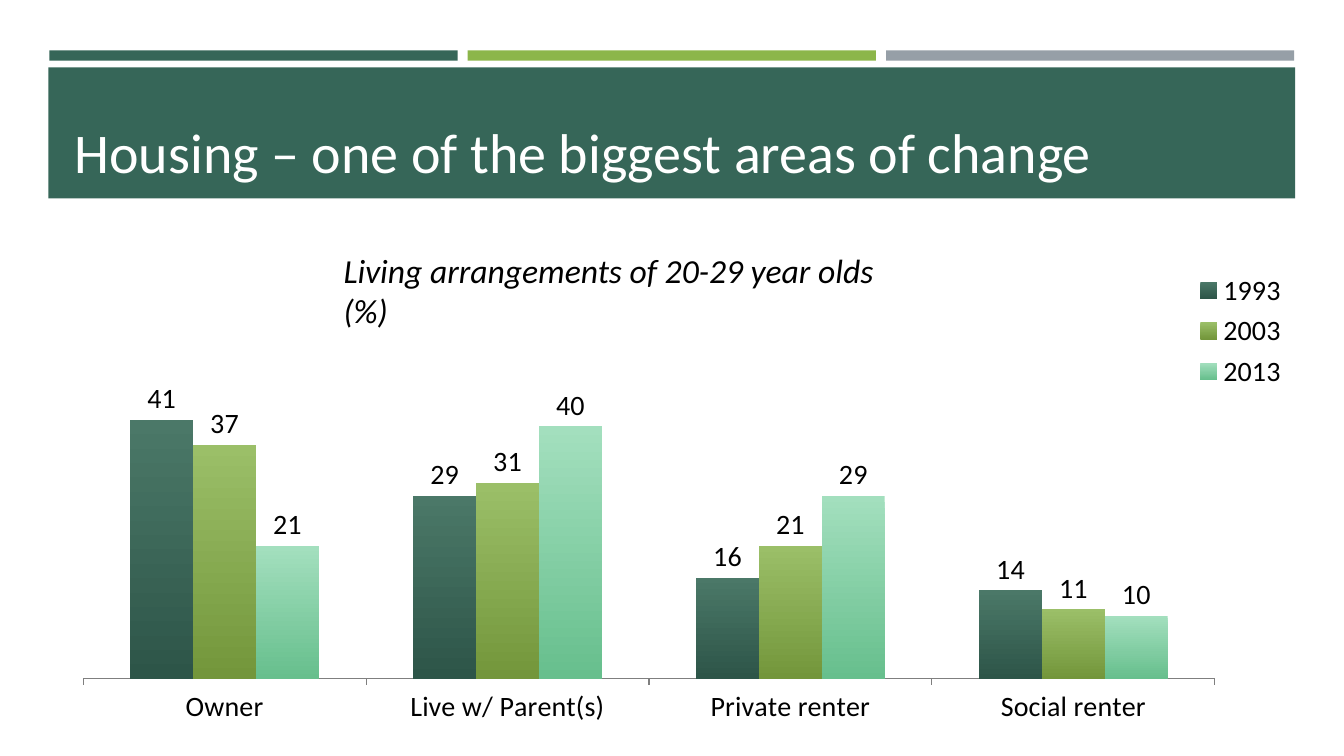
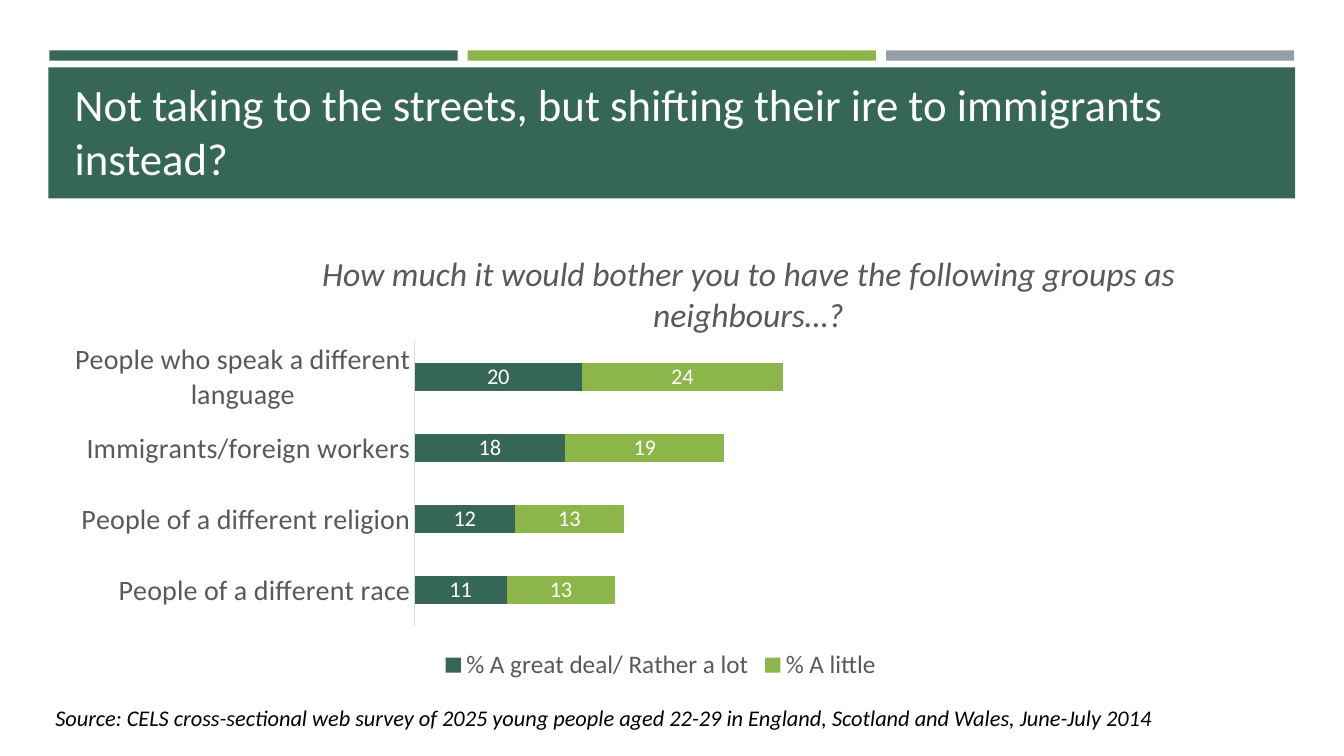
from lxml import etree
from pptx import Presentation
from pptx.chart.data import CategoryChartData
from pptx.dml.color import RGBColor
from pptx.enum import chart as charts, shapes, text
from pptx.oxml.ns import qn
from pptx.util import Pt

FONT = "Calibri"
GREEN, LIME, GREY = "366658", "8CB64A", "969FA7"
WHITE, BLACK, DARK_GREY = "FFFFFF", "000000", "595959"

STRIPE_COLOURS = [GREEN, LIME, GREY]
STRIPE_LEFT, STRIPE_TOP, STRIPE_WIDTH, STRIPE_HEIGHT, STRIPE_GAP = 35.3, 36, 291.6, 7.4, 7.2
BAND_BOX = (34.6, 48.2, 890.6, 93.6)
TITLE_BOX = (46.1, 55.4, 868.3, 79.9)

HOUSING = {
    "title": "Housing – one of the biggest areas of change",
    "title_size": 40,
    "note": "Living arrangements of 20-29 year olds (%)",
    "note_size": 24,
    "note_box": (238.3, 175, 412.6, 66),
    "chart": {
        "type": charts.XL_CHART_TYPE.COLUMN_CLUSTERED,
        "box": (41, 162, 918.7, 362.9),
        "categories": ["Owner", "Live w/ Parent(s)", "Private renter", "Social renter"],
        "series": [
            ("1993", (41, 29, 16, 14), ("4B7868", "2D5548")),
            ("2003", (37, 31, 21, 11), ("9BBF68", "73963B")),
            ("2013", (21, 40, 29, 10), ("A3DFBE", "67BF8D")),
        ],
        "maximum": 70,
        "number_format": "0",
        "label_size": 20,
        "label_colour": BLACK,
        "text_colour": BLACK,
        "axis_colour": "7F7F7F",
        "tick": charts.XL_TICK_MARK.OUTSIDE,
        "legend_position": charts.XL_LEGEND_POSITION.RIGHT,
        "legend_size": 20,
        "legend_area": (0.88, 0.08, 0.08, 0.25),
        "plot_area": (0.02, 0.02, 0.88, 0.87),
    },
}

NEIGHBOURS = {
    "title": "Not taking to the streets, but shifting their ire to immigrants instead?",
    "title_size": 32,
    "note": "Source: CELS cross-sectional web survey of 2025 young people aged 22-29 "
            "in England, Scotland and Wales, June-July 2014",
    "note_size": 16,
    "note_box": (32.4, 499.7, 879.1, 26.6),
    "chart": {
        "type": charts.XL_CHART_TYPE.BAR_STACKED,
        "box": (32.4, 162, 879.1, 327.6),
        "title": "How much it would bother you to have the following groups as neighbours…?",
        "title_area": (0.22, 0.04),
        "categories": ["People of a different race", "People of a different religion",
                       "Immigrants/foreign workers", "People who speak a different language"],
        "series": [
            ("% A great deal/ Rather a lot", (11, 12, 18, 20), (GREEN,)),
            ("% A little", (13, 13, 19, 24), (LIME,)),
        ],
        "maximum": 100,
        "number_format": "###0",
        "label_size": 16,
        "label_colour": WHITE,
        "text_colour": DARK_GREY,
        "axis_colour": "D9D9D9",
        "tick": charts.XL_TICK_MARK.NONE,
        "legend_position": charts.XL_LEGEND_POSITION.BOTTOM,
        "legend_size": 18,
        "plot_area": (0.3, 0.25, 0.68, 0.62),
    },
}


def colour(hex_string):
    return RGBColor.from_string(hex_string)


def points(box):
    return [Pt(length) for length in box]


def style_font(font, size, hex_string, italic=False):
    font.name, font.size, font.italic = FONT, Pt(size), italic
    font.bold = False
    font.color.rgb = colour(hex_string)


def add_run(paragraph, content, size, hex_string, italic=False):
    run = paragraph.add_run()
    run.text = content
    style_font(run.font, size, hex_string, italic)


def decorate_layout(layout, slide):
    """Draw the stripes and the title band, then move them to the layout."""
    rectangles = [(BAND_BOX, GREEN)]
    for index, stripe_colour in enumerate(STRIPE_COLOURS):
        left = STRIPE_LEFT + index * (STRIPE_WIDTH + STRIPE_GAP)
        rectangles.append(((left, STRIPE_TOP, STRIPE_WIDTH, STRIPE_HEIGHT), stripe_colour))
    for box, fill_colour in rectangles:
        shape = slide.shapes.add_shape(shapes.MSO_SHAPE.RECTANGLE, *points(box))
        shape.shadow.inherit = False
        shape.fill.solid()
        shape.fill.fore_color.rgb = colour(fill_colour)
        shape.line.fill.background()
        layout.shapes._spTree.insert(2, shape._element)


def set_title(slide, content, size):
    title = slide.shapes.title
    title.left, title.top, title.width, title.height = points(TITLE_BOX)
    frame = title.text_frame
    frame.auto_size = text.MSO_AUTO_SIZE.NONE
    frame.vertical_anchor = text.MSO_ANCHOR.BOTTOM
    paragraph = frame.paragraphs[0]
    paragraph.alignment = text.PP_ALIGN.LEFT
    add_run(paragraph, content, size, WHITE)


def add_note(slide, content, size, box):
    frame = slide.shapes.add_textbox(*points(box)).text_frame
    frame.word_wrap = True
    add_run(frame.paragraphs[0], content, size, BLACK, italic=True)


def place_part(element, index, area, inner=False):
    """Give a chart part a manual layout, in fractions of the chart."""
    for old_layout in element.findall(qn("c:layout")):
        element.remove(old_layout)
    layout = etree.Element(qn("c:layout"))
    manual = etree.SubElement(layout, qn("c:manualLayout"))
    settings = [("layoutTarget", "inner")] if inner else []
    settings += [("xMode", "edge"), ("yMode", "edge")]
    settings += zip("xywh", area)
    for name, value in settings:
        etree.SubElement(manual, qn("c:" + name)).set("val", str(value))
    element.insert(index, layout)


def fill_series(fill, colours):
    if len(colours) == 1:
        fill.solid()
        fill.fore_color.rgb = colour(colours[0])
        return
    fill.gradient()
    fill.gradient_angle = 270
    for stop, stop_colour in zip(fill.gradient_stops, colours):
        stop.color.rgb = colour(stop_colour)


def add_bar_chart(slide, content):
    data = CategoryChartData(number_format=content["number_format"])
    data.categories = content["categories"]
    for name, values, _ in content["series"]:
        data.add_series(name, values)
    chart = slide.shapes.add_chart(content["type"], *points(content["box"]), data).chart
    style_font(chart.font, 10, BLACK)

    chart.has_title = "title" in content
    if chart.has_title:
        paragraph = chart.chart_title.text_frame.paragraphs[0]
        add_run(paragraph, content["title"], 24, content["text_colour"], italic=True)
        place_part(chart.chart_title._element, 1, content["title_area"])

    chart.has_legend = True
    chart.legend.position = content["legend_position"]
    chart.legend.include_in_layout = False
    style_font(chart.legend.font, content["legend_size"], content["text_colour"])
    if "legend_area" in content:
        place_part(chart.legend._element, 1, content["legend_area"])

    value_axis = chart.value_axis
    value_axis.minimum_scale, value_axis.maximum_scale = 0, content["maximum"]
    value_axis.has_major_gridlines = False
    value_axis.visible = False
    category_axis = chart.category_axis
    category_axis.major_tick_mark = content["tick"]
    category_axis.format.line.color.rgb = colour(content["axis_colour"])
    category_axis.format.line.width = Pt(0.75)
    style_font(category_axis.tick_labels.font, 20, content["text_colour"])

    plot = chart.plots[0]
    plot.gap_width = 150
    plot.vary_by_categories = False
    plot.has_data_labels = True
    labels = plot.data_labels
    labels.show_value = True
    labels.number_format = content["number_format"]
    labels.number_format_is_linked = False
    style_font(labels.font, content["label_size"], content["label_colour"])
    for series, (_, _, colours) in zip(plot.series, content["series"]):
        fill_series(series.format.fill, colours)
    place_part(chart._chartSpace.chart.plotArea, 0, content["plot_area"], inner=True)


def main():
    presentation = Presentation()
    presentation.slide_width, presentation.slide_height = Pt(960), Pt(540)
    layout = presentation.slide_layouts.get_by_name("Title Only")
    for index, content in enumerate([HOUSING, NEIGHBOURS]):
        slide = presentation.slides.add_slide(layout)
        if index == 0:
            decorate_layout(layout, slide)
        set_title(slide, content["title"], content["title_size"])
        add_bar_chart(slide, content["chart"])
        add_note(slide, content["note"], content["note_size"], content["note_box"])
    presentation.save("out.pptx")


if __name__ == "__main__":
    main()
